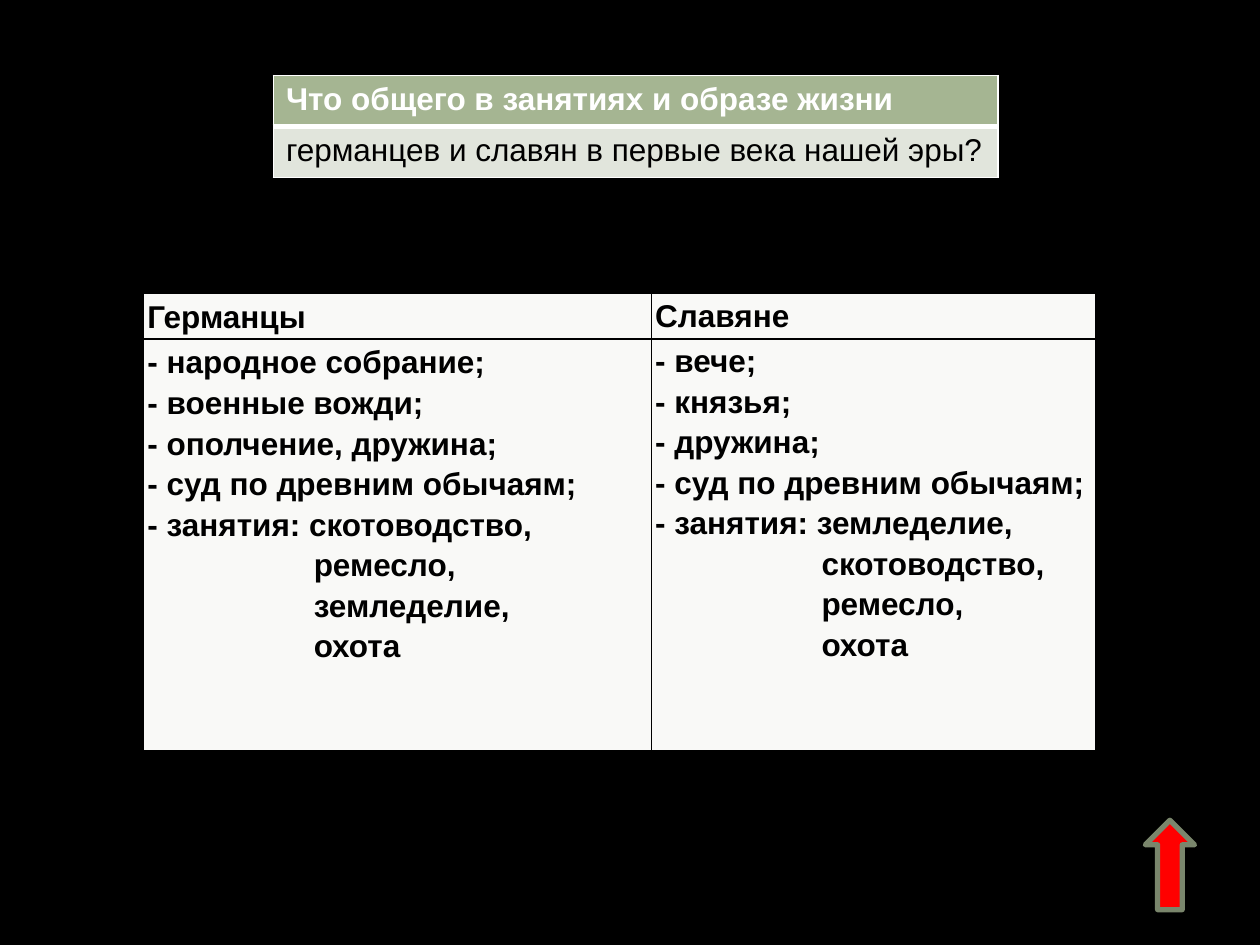
from lxml import etree
from pptx import Presentation
from pptx.dml.color import RGBColor
from pptx.enum.shapes import MSO_SHAPE
from pptx.oxml.ns import qn
from pptx.util import Inches, Pt

HANGING = Inches(1.32)


def color(value):
    return RGBColor.from_string(value)


def fill_cell(cell, lines, background, ink, bold, borders):
    """Write lines into a cell; borders maps sides (L, R, T, B) to (colour, points)."""
    frame = cell.text_frame
    frame.text = "\n".join(lines)
    for paragraph in frame.paragraphs:
        paragraph.font.name = "Arial"
        paragraph.font.size = Pt(18)
        paragraph.font.bold = bold
        paragraph.font.color.rgb = color(ink)
    properties = cell._tc.get_or_add_tcPr()
    for side in "LRTB":
        line_color, points = borders[side]
        line = etree.SubElement(properties, qn(f"a:ln{side}"), w=str(Pt(points)))
        solid = etree.SubElement(line, qn("a:solidFill"))
        etree.SubElement(solid, qn("a:srgbClr"), val=line_color)
    cell.fill.solid()
    cell.fill.fore_color.rgb = color(background)


deck = Presentation()
deck.slide_width, deck.slide_height = Inches(10), Inches(7.5)
page = deck.slides.add_slide(deck.slide_layouts[6])
page.background.fill.solid()
page.background.fill.fore_color.rgb = color("000000")

# Question
question = page.shapes.add_table(
    2, 1, Inches(2.17), Inches(0.6), Inches(5.75), Inches(0.81)).table
thin_white = dict.fromkeys("LRTB", ("FFFFFF", 1))
thick_white = ("FFFFFF", 3)
fill_cell(question.cell(0, 0), ["Что общего в занятиях и образе жизни"],
          "A5B592", "FFFFFF", True, thin_white | {"B": thick_white})
fill_cell(question.cell(1, 0), ["германцев и славян в первые века нашей эры?"],
          "E1E5DC", "000000", False, thin_white | {"T": thick_white})

# Comparison: each people with its customs, then the further occupations
peoples = [
    ("Германцы",
     ["- народное собрание;", "- военные вожди;", "- ополчение, дружина;",
      "- суд по древним обычаям;", "- занятия: скотоводство,"],
     ["ремесло,", "земледелие,", "охота"], 4.03, (0.01, 0.01)),
    ("Славяне",
     ["- вече;", "- князья;", "- дружина;",
      "- суд по древним обычаям;", "- занятия: земледелие,"],
     ["скотоводство,", "ремесло,", "охота"], 3.53, (0.03, 0)),
]
comparison = page.shapes.add_table(
    2, 2, Inches(1.14), Inches(2.33), Inches(7.56), Inches(3.63)).table
comparison.rows[0].height = Inches(0.36)
comparison.rows[1].height = Inches(3.27)
thin_black = dict.fromkeys("LRTB", ("000000", 1))
for column, (people, customs, occupations, width, margins) in enumerate(peoples):
    comparison.columns[column].width = Inches(width)
    right, vertical = margins
    for row, lines in enumerate([[people], customs + occupations]):
        cell = comparison.cell(row, column)
        cell.margin_left, cell.margin_right = Inches(0.03), Inches(right)
        cell.margin_top = cell.margin_bottom = Inches(vertical)
        fill_cell(cell, lines, "F9F9F7", "000000", True, thin_black)
        for paragraph in cell.text_frame.paragraphs:
            paragraph.line_spacing = 1.15
    for paragraph in cell.text_frame.paragraphs[len(customs):]:
        paragraph._p.get_or_add_pPr().set("marL", str(HANGING))

# Arrow
arrow = page.shapes.add_shape(
    MSO_SHAPE.UP_ARROW, Inches(9.09), Inches(6.51), Inches(0.39), Inches(0.71))
arrow.shadow.inherit = False
arrow.fill.solid()
arrow.fill.fore_color.rgb = color("FF0000")
arrow.line.color.rgb = color("7A866C")
arrow.line.width = Pt(3)

deck.save("out.pptx")
